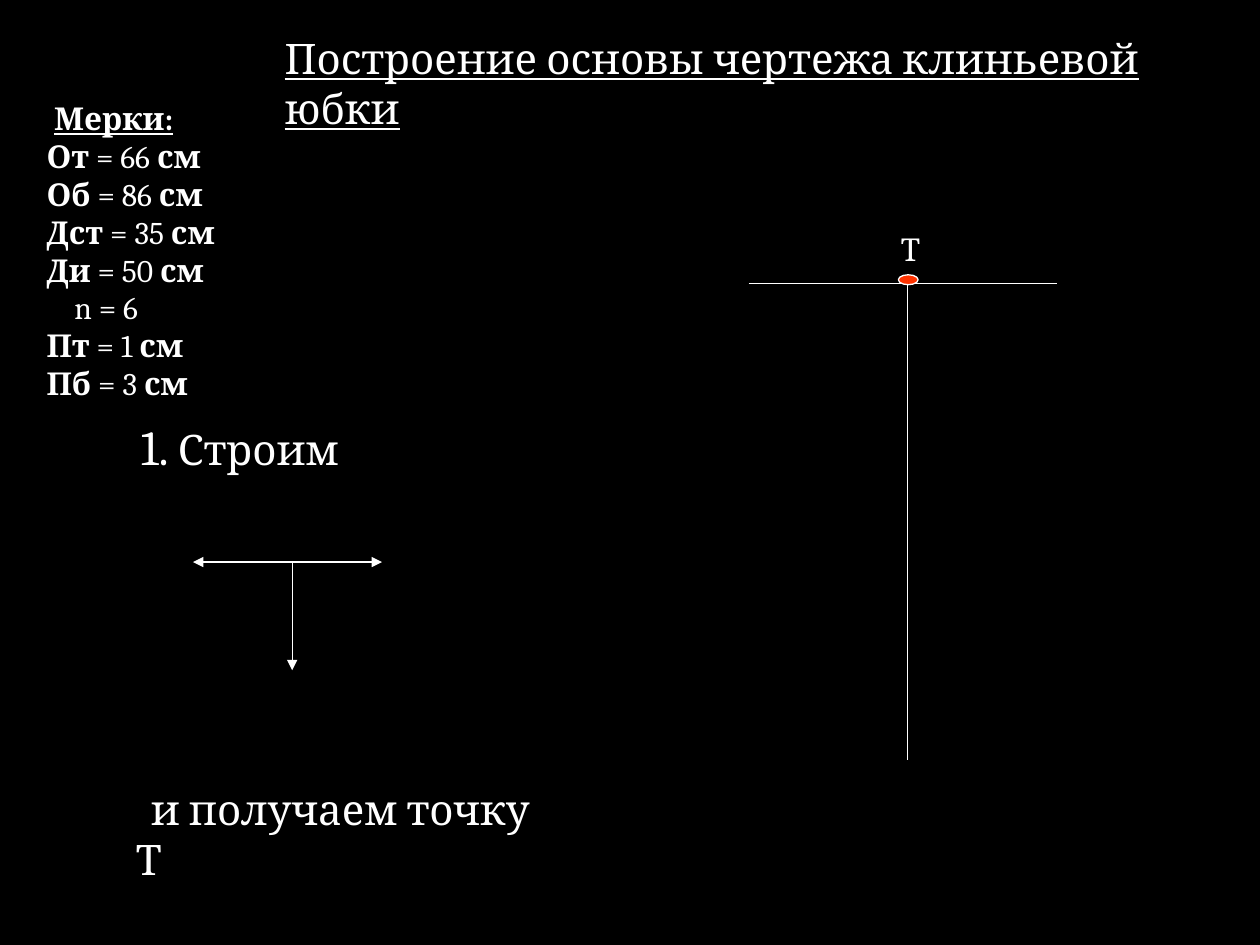
from lxml import etree
from pptx import Presentation
from pptx import util as u
from pptx.dml.color import RGBColor
from pptx.enum import shapes
from pptx.oxml import ns

COLOURS = {"ground": "000000", "ink": "FFFFFF", "point": "FF3300"}
ink = RGBColor.from_string(COLOURS["ink"])

deck = Presentation()
deck.slide_width, deck.slide_height = u.Cm(25.4), u.Cm(19.05)
page = deck.slides.add_slide(deck.slide_layouts[6])
page.background.fill.solid()
page.background.fill.fore_color.rgb = RGBColor.from_string(COLOURS["ground"])


def add_text(left, top, width, height, lines):
    """Add a text box; each line is (first-line indent in cm, [(text, size, bold, underline)])."""
    box = page.shapes.add_textbox(u.Cm(left), u.Cm(top), u.Cm(width), u.Cm(height))
    frame = box.text_frame
    frame.word_wrap = True
    for number, (indent, spans) in enumerate(lines):
        para = frame.paragraphs[0] if number == 0 else frame.add_paragraph()
        para.font.name = "Cambria"
        para.font.color.rgb = ink
        if indent:
            para._p.get_or_add_pPr().set("indent", str(u.Cm(indent)))
        for words, size, bold, underline in spans:
            span = para.add_run()
            span.text = words
            span.font.size = u.Pt(size)
            span.font.bold = bold
            span.font.underline = underline


def add_line(start, end, arrow=False):
    line = page.shapes.add_connector(
        shapes.MSO_CONNECTOR.STRAIGHT, *(u.Cm(value) for value in start + end))
    line.line.color.rgb = ink
    line.line.width = u.Pt(0.75)
    if arrow:
        etree.SubElement(line.line._get_or_add_ln(), ns.qn("a:tailEnd"), type="triangle")
    etree.SubElement(line._element.spPr, ns.qn("a:effectLst"))


# Drawing: waist line, centre line and point Т
waist, centre = 5.72, 18.29
add_line((15.09, waist), (21.31, waist))
add_line((centre, waist), (centre, 15.32))
add_text(17.91, 4.52, 1.4, 1.02, [(0, [("Т", 18, False, False)])])

point = page.shapes.add_shape(
    shapes.MSO_SHAPE.OVAL, u.Cm(18.11), u.Cm(5.54), u.Cm(0.4), u.Cm(0.2))
point.shadow.inherit = False
point.fill.solid()
point.fill.fore_color.rgb = RGBColor.from_string(COLOURS["point"])
point.line.color.rgb = ink
point.line.width = u.Pt(0.75)

# Step 1: directions in which to draw
arrow_y = 11.33
for start, end in [
    ((6.71, arrow_y), (3.89, arrow_y)),
    ((5.31, arrow_y), (7.7, arrow_y)),
    ((5.89, arrow_y), (5.89, 13.51)),
]:
    add_line(start, end, arrow=True)

add_text(2.59, 8.28, 8, 1.4,
         [(0, [("1. ", 28, False, False), ("Строим", 24, False, False)])])
add_text(2.49, 15.67, 8.94, 2.3,
         [(0.3, [("и получаем точку Т", 24, False, False)])])

# Measurements
measures = [(0.15, [("Мерки:", 18, True, True)])]
for name, value in [("От", 66), ("Об", 86), ("Дст", 35), ("Ди", 50),
                    ("n", 6), ("Пт", 1), ("Пб", 3)]:
    if name == "n":
        measures.append((0.56, [(f"n = {value}", 18, False, False)]))
    else:
        measures.append((0, [(name, 18, True, False),
                             (f" = {value} ", 18, False, False),
                             ("см", 18, True, False)]))
add_text(0.69, 1.88, 5, 7.6, measures)

add_text(5.49, 0.53, 19.91, 1.27,
         [(0, [("Построение основы чертежа клиньевой юбки", 24, False, True)])])

deck.save("out.pptx")
